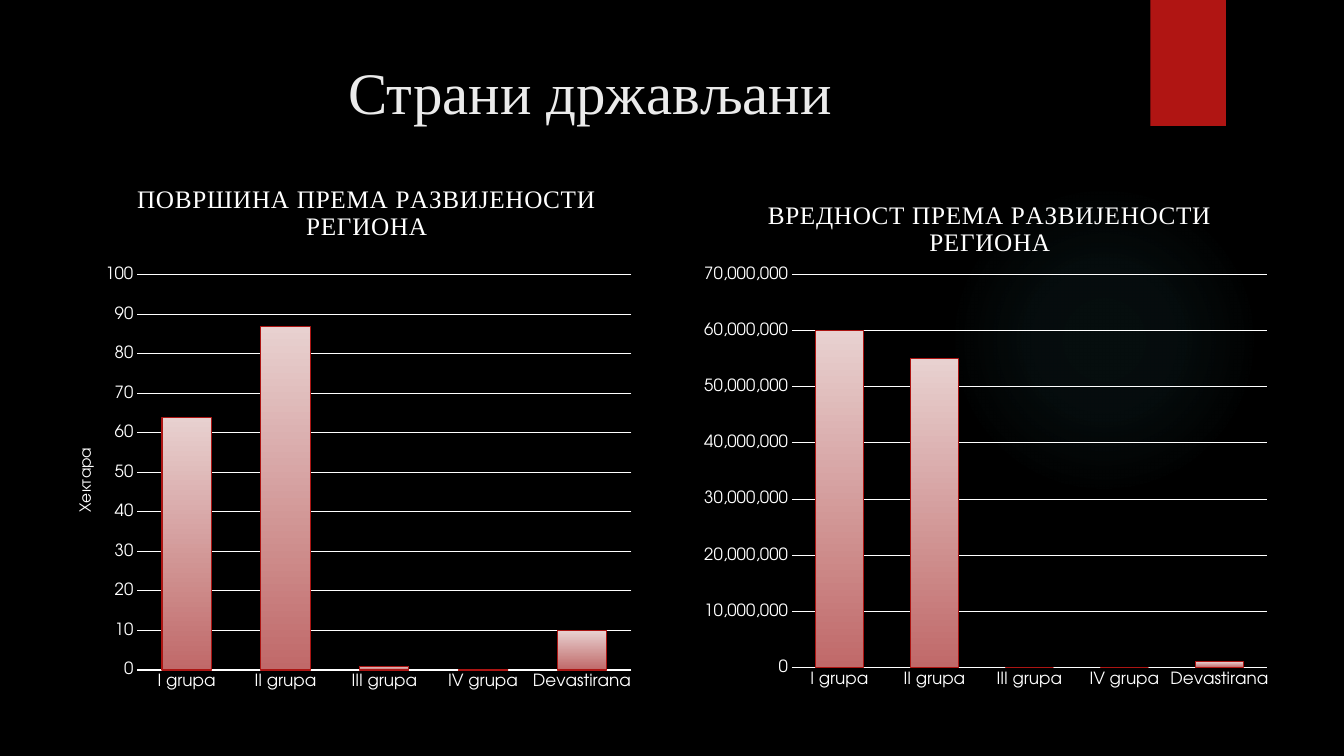
from lxml import etree
from pptx import Presentation
from pptx import util as u
from pptx.chart.data import CategoryChartData
from pptx.dml.color import RGBColor
from pptx.enum import chart as ch, shapes, text
from pptx.oxml import parse_xml
from pptx.oxml.ns import nsdecls, qn

BLACK = RGBColor(0x00, 0x00, 0x00)
WHITE = RGBColor(0xFF, 0xFF, 0xFF)
TITLE_GREY = RGBColor(0xEB, 0xEB, 0xEB)
RED = RGBColor(0xB0, 0x15, 0x13)
BAR_EDGE = RGBColor(0xAC, 0x15, 0x13)
BAR_TOP = RGBColor(0xE8, 0xD1, 0xD0)
BAR_BOTTOM = RGBColor(0xC0, 0x69, 0x69)
GLOW = RGBColor(0x50, 0xB9, 0xC1)

SERIF, SANS = "Times New Roman", "TeX Gyre Adventor"
GROUPS = ["I grupa", "II grupa", "III grupa", "IV grupa", "Devastirana"]

# Layouts are fractions of the chart frame
AREA = {
    "box": (0.49, 1.72, 5.89, 5.22),
    "title": "ПОВРШИНА ПРЕМА РАЗВИЈЕНОСТИ РЕГИОНА",
    "title_at": (0.14, 0.01),
    "plot_at": (0.148, 0.193, 0.832, 0.751),
    "values": (64, 87, 1, 0, 10),
    "top": 100, "step": 10, "number_format": "0",
    "unit": "Хектара", "unit_at": (0.04, 0.515),
}
VALUE = {
    "box": (6.87, 1.72, 5.83, 5.21),
    "title": "ВРЕДНОСТ ПРЕМА РАЗВИЈЕНОСТИ РЕГИОНА",
    "title_at": (0.12, 0.04),
    "plot_at": (0.169, 0.193, 0.808, 0.748),
    "values": (60000000, 55000000, 0, 0, 1000000),
    "top": 70000000, "step": 10000000, "number_format": "#,##0",
}


def style_font(font, name, size, color):
    for key, value in {"name": name, "size": u.Pt(size), "bold": False}.items():
        setattr(font, key, value)
    font.color.rgb = color


def style_line(line, color):
    line.color.rgb = color
    line.width = u.Pt(0.75)


def add_block(slide, kind, box, color):
    block = slide.shapes.add_shape(kind, *map(u.Inches, box))
    block.shadow.inherit = False
    block.fill.solid()
    block.fill.fore_color.rgb = color
    block.line.fill.background()
    return block


def add_glow(slide):
    glow = add_block(slide, shapes.MSO_SHAPE.OVAL, (9.41, 1.83, 3.08, 3.08), GLOW)
    stops = "".join(
        f'<a:gs pos="{pos * 1000}"><a:srgbClr val="{GLOW}">'
        f'<a:alpha val="{alpha * 1000}"/></a:srgbClr></a:gs>'
        for pos, alpha in ((0, 7), (36, 6), (69, 0), (100, 0)))
    gradient = parse_xml(
        f'<a:gradFill {nsdecls("a")}><a:gsLst>{stops}</a:gsLst><a:path path="circle">'
        '<a:fillToRect l="50000" t="50000" r="50000" b="50000"/></a:path></a:gradFill>')
    properties = glow.fill._xPr
    properties.replace(properties.find(qn("a:solidFill")), gradient)


def add_heading(slide, words):
    box = slide.shapes.add_textbox(*map(u.Inches, (0.71, 0.5, 10.29, 1.53)))
    frame = box.text_frame
    frame.word_wrap = True
    frame.vertical_anchor = text.MSO_ANCHOR.TOP
    paragraph = frame.paragraphs[0]
    paragraph.text = words
    paragraph.alignment = text.PP_ALIGN.CENTER
    style_font(paragraph.runs[0].font, SERIF, 42, TITLE_GREY)


def place(element, spot, inner=False):
    """Give a chart part a fixed layout inside its chart."""
    layout = element.find(qn("c:layout"))
    if layout is None:
        layout = etree.Element(qn("c:layout"))
        before = element.find(qn("c:tx"))
        element.insert(0 if before is None else element.index(before) + 1, layout)
    for child in list(layout):
        layout.remove(child)
    manual = etree.SubElement(layout, qn("c:manualLayout"))
    entries = [("layoutTarget", "inner")] if inner else []
    entries += [("xMode", "edge"), ("yMode", "edge")]
    entries += zip("xywh", map(str, spot))
    for tag, value in entries:
        etree.SubElement(manual, qn(f"c:{tag}")).set("val", value)


def set_title(title, words, spot, font_name, size, spacing=0):
    paragraph = title.text_frame.paragraphs[0]
    run = paragraph.add_run()
    run.text = words
    style_font(run.font, font_name, size, WHITE)
    run.font._element.set("spc", str(spacing))
    place(title._element, spot)


def style_axes(chart, info):
    for axis in (chart.category_axis, chart.value_axis):
        axis.major_tick_mark = axis.minor_tick_mark = ch.XL_TICK_MARK.NONE
        style_font(axis.tick_labels.font, SANS, 12, WHITE)
    style_line(chart.category_axis.format.line, WHITE)
    scale = chart.value_axis
    settings = {"minimum_scale": 0, "maximum_scale": info["top"],
                "major_unit": info["step"], "has_major_gridlines": True}
    for key, value in settings.items():
        setattr(scale, key, value)
    scale.format.line.fill.background()
    style_line(scale.major_gridlines.format.line, WHITE)
    scale.tick_labels.number_format = info["number_format"]
    scale.tick_labels.number_format_is_linked = False
    if "unit" in info:
        set_title(scale.axis_title, info["unit"], info["unit_at"], SANS, 12)


def style_bars(plot):
    for key, value in {"gap_width": 100, "overlap": -24, "vary_by_categories": False}.items():
        setattr(plot, key, value)
    bars = plot.series[0].format
    bars.fill.gradient()
    bars.fill.gradient_angle = 270
    for stop, color in zip(bars.fill.gradient_stops, (BAR_TOP, BAR_BOTTOM)):
        stop.color.rgb = color
    style_line(bars.line, BAR_EDGE)


def add_column_chart(slide, info):
    data = CategoryChartData()
    data.categories = GROUPS
    data.add_series("Series 1", info["values"])
    chart = slide.shapes.add_chart(
        ch.XL_CHART_TYPE.COLUMN_CLUSTERED, *map(u.Inches, info["box"]), data).chart
    style_font(chart.font, SANS, 10, WHITE)
    chart.has_legend = False
    set_title(chart.chart_title, info["title"], info["title_at"], SERIF, 18, spacing=50)
    chart.chart_title.include_in_layout = False
    style_axes(chart, info)
    style_bars(chart.plots[0])
    place(chart._chartSpace.chart.plotArea, info["plot_at"], inner=True)


def main():
    deck = Presentation()
    deck.slide_width, deck.slide_height = u.Inches(13.33), u.Inches(7.5)
    slide = deck.slides.add_slide(deck.slide_layouts[6])

    # Backdrop
    slide.background.fill.solid()
    slide.background.fill.fore_color.rgb = BLACK
    add_glow(slide)
    add_block(slide, shapes.MSO_SHAPE.RECTANGLE, (11.41, 0, 0.75, 1.25), RED)

    # Heading and the two charts
    add_heading(slide, "Страни држављани")
    for info in (AREA, VALUE):
        add_column_chart(slide, info)

    deck.save("out.pptx")


if __name__ == "__main__":
    main()
